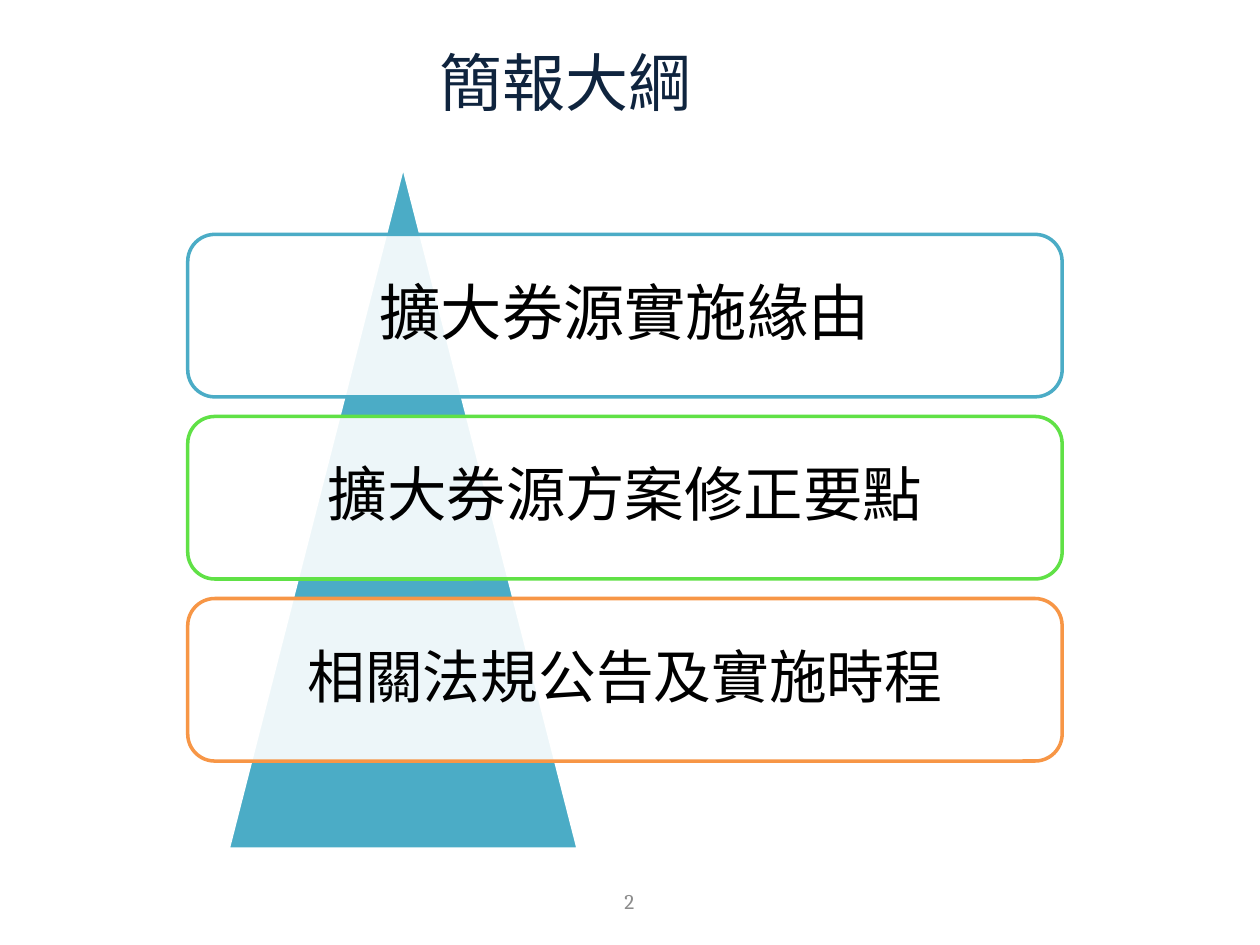
from lxml import etree
from pptx import Presentation
from pptx import util as u
from pptx.dml.color import RGBColor
from pptx.enum import shapes, text
from pptx.oxml.ns import qn

TITLE = "簡報大綱"
PAGE = "2"
# wording, outline colour, type size
TOPICS = [
    ("擴大券源實施緣由", "teal", 35),
    ("擴大券源方案修正要點", "green", 34),
    ("相關法規公告及實施時程", "orange", 33),
]
THEME = {
    "navy": "0F243E", "grey": "8C8C8C", "black": "000000", "white": "FFFFFF",
    "teal": "4BACC6", "green": "60E146", "orange": "F79646",
    "latin": "Cambria", "cjk": "Noto Sans CJK SC",
    "title_size": 36, "page_size": 12, "line": 2, "card_alpha": 90,
}
CARD_LEFT, CARD_TOP, CARD_W, CARD_H = 1.49, 1.86, 6.94, 1.29
CARD_PITCH = 1.445


def rgb(name):
    return RGBColor.from_string(THEME[name])


def box(*at):
    return [u.Inches(n) for n in at]


def write(sp, words, size, color, font, inset=0.1):
    tf = sp.text_frame
    tf.word_wrap = True
    tf.vertical_anchor = text.MSO_ANCHOR.MIDDLE
    tf.margin_left = tf.margin_right = u.Inches(inset)
    tf.margin_top = tf.margin_bottom = u.Inches(inset if inset > 0.1 else 0.05)
    p = tf.paragraphs[0]
    p.alignment = text.PP_ALIGN.CENTER
    r = p.add_run()
    r.text = words
    r.font.size = u.Pt(size)
    r.font.name = THEME[font]
    r.font.color.rgb = rgb(color)
    ea = etree.SubElement(r.font._element, qn("a:ea"))
    ea.set("typeface", THEME["cjk"])
    return p


def add_shape(s, kind, at, fill, line):
    sp = s.shapes.add_shape(kind, *box(*at))
    sp.shadow.inherit = False
    sp.fill.solid()
    sp.fill.fore_color.rgb = rgb(fill)
    sp.line.color.rgb = rgb(line)
    sp.line.width = u.Pt(THEME["line"])
    return sp


def set_opacity(sp, percent):
    clr = sp._element.spPr.find(qn("a:solidFill"))[0]
    etree.SubElement(clr, qn("a:alpha")).set("val", str(percent * 1000))


def main():
    prs = Presentation()
    prs.slide_width, prs.slide_height = box(10, 7.5)
    s = prs.slides.add_slide(prs.slide_layouts[6])

    title = s.shapes.add_textbox(*box(1.22, 0.3, 6.54, 0.69))
    write(title, TITLE, THEME["title_size"], "navy", "latin")
    page = s.shapes.add_textbox(*box(3.83, 6.95, 2.33, 0.4))
    write(page, PAGE, THEME["page_size"], "grey", "latin")

    add_shape(s, shapes.MSO_SHAPE.ISOSCELES_TRIANGLE,
              (1.81, 1.31, 2.78, 5.43), "teal", "white")
    for i, (words, color, size) in enumerate(TOPICS):
        at = (CARD_LEFT, CARD_TOP + i * CARD_PITCH, CARD_W, CARD_H)
        card = add_shape(s, shapes.MSO_SHAPE.ROUNDED_RECTANGLE, at, "white", color)
        set_opacity(card, THEME["card_alpha"])
        p = write(card, words, size, "black", "cjk", inset=0.14)
        p.line_spacing = 0.9

    prs.save("out.pptx")


if __name__ == "__main__":
    main()
